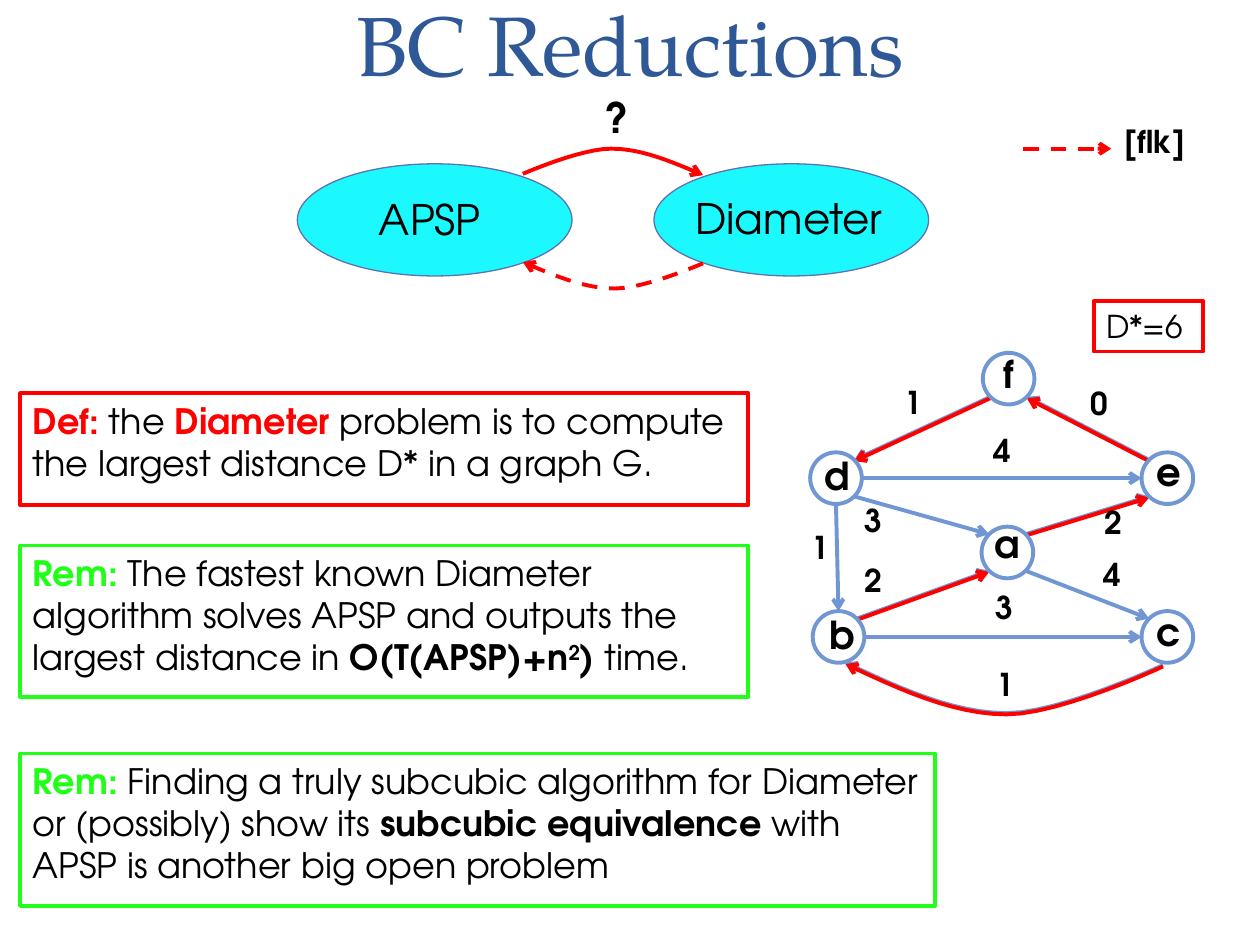
"""Build the BC Reductions slide: two problems, three statements and a weighted graph."""
from math import cos, radians, sin
from typing import NamedTuple

from lxml import etree
from pptx import Presentation
from pptx.dml.color import RGBColor
from pptx.enum.dml import MSO_LINE
from pptx.enum.shapes import MSO_CONNECTOR, MSO_SHAPE
from pptx.enum.text import MSO_ANCHOR, PP_ALIGN
from pptx.oxml.ns import qn
from pptx.util import Inches, Pt

COLUMNS, ROWS = 100, 75
CELL = Inches(0.1)
BODY_FONT, TITLE_FONT = "TeX Gyre Adventor", "TeX Gyre Pagella"
BLACK, RED, GREEN = "000000", "FF0000", "1FFF17"
CYAN, OVAL_EDGE, GRAPH_BLUE, TITLE_BLUE = "1BF9FF", "5C72B2", "7097D3", "2F5897"
LEFT, CENTER = PP_ALIGN.LEFT, PP_ALIGN.CENTER
TOP, BOTTOM = MSO_ANCHOR.TOP, MSO_ANCHOR.BOTTOM
OVAL, RECTANGLE = MSO_SHAPE.OVAL, MSO_SHAPE.RECTANGLE
STRAIGHT, DASH = MSO_CONNECTOR.STRAIGHT, MSO_LINE.DASH
NODE_SIZE = 4.1
PATH_SHIFT = 0.1
EAST, SOUTH_EAST, SOUTH, SOUTH_WEST = 0, 45, 90, 135
WEST, NORTH_WEST, NORTH, NORTH_EAST = 180, 225, 270, 315


class Point(NamedTuple):
    x: float
    y: float


class Box(NamedTuple):
    left: float
    top: float
    width: float
    height: float


class Run(NamedTuple):
    text: str
    color: str = BLACK
    bold: bool = False
    raised: bool = False


class Statement(NamedTuple):
    box: Box
    border: str
    runs: list[Run]


class Node(NamedTuple):
    center: Point
    label_center: Point


class Edge(NamedTuple):
    start: str
    start_side: int
    end: str
    end_side: int
    on_path: bool = False


class Label(NamedTuple):
    text: str
    box: Box
    size: int = 18
    bold: bool = True


STATEMENTS = [
    Statement(Box(1.6, 31.2, 57.8, 8.9), RED, [
        Run("Def: ", RED, True), Run("the "), Run("Diameter ", RED, True),
        Run("problem is to compute the largest distance D* in a graph G.")]),
    Statement(Box(1.6, 43.3, 57.8, 12), GREEN, [
        Run("Rem: ", GREEN, True),
        Run("The fastest known Diameter algorithm solves APSP and outputs the largest distance in "),
        Run("O(T(APSP)+n", bold=True), Run("2", bold=True, raised=True),
        Run(") ", bold=True), Run("time.")]),
    Statement(Box(1.6, 59.8, 72.6, 12.1), GREEN, [
        Run("Rem: ", GREEN, True),
        Run("Finding a truly subcubic algorithm for Diameter or (possibly) show its "),
        Run("subcubic equivalence", bold=True),
        Run(" with APSP is another big open problem")]),
]
NODES = {
    "f": Node(Point(80.05, 30.05), Point(80.05, 29.65)),
    "e": Node(Point(92.65, 37.95), Point(92.8, 37.45)),
    "d": Node(Point(66.35, 37.95), Point(66.45, 37.75)),
    "a": Node(Point(79.95, 43.85), Point(79.95, 43.15)),
    "b": Node(Point(66.55, 50.55), Point(66.85, 50.35)),
    "c": Node(Point(92.65, 50.55), Point(92.8, 50.15)),
}
EDGES = [
    Edge("b", EAST, "c", WEST),
    Edge("b", NORTH_EAST, "a", SOUTH_WEST, on_path=True),
    Edge("a", SOUTH_EAST, "c", NORTH_WEST),
    Edge("d", SOUTH_EAST, "a", NORTH_WEST),
    Edge("a", NORTH_EAST, "e", SOUTH_WEST, on_path=True),
    Edge("d", EAST, "e", WEST),
    Edge("e", NORTH_WEST, "f", SOUTH_EAST, on_path=True),
    Edge("f", SOUTH_WEST, "d", NORTH_EAST, on_path=True),
    Edge("d", SOUTH, "b", NORTH),
]
WEIGHTS = [
    ("3", 78, 46.2), ("1", 78.1, 52.3), ("2", 67.6, 44), ("4", 86.6, 43.6), ("3", 67.6, 39.3),
    ("2", 86.7, 39.4), ("4", 77.9, 33.7), ("0", 85.6, 30), ("1", 70.8, 29.9), ("1", 63.4, 41.4),
]
LABELS = [Label(weight, Box(left, top, 3.4, 4)) for weight, left, top in WEIGHTS] + [
    Label("?", Box(47.1, 6.8, 3.9, 5), size=24),
    Label("[flk]", Box(88.3, 9.2, 7, 4)),
]
PROBLEMS = [
    (Box(23.6, 13, 21.8, 8.9), Label("APSP", Box(29.1, 14.9, 10.3, 5), 24, False)),
    (Box(51.9, 13, 21.8, 8.9), Label("Diameter", Box(54.2, 14.8, 19, 5), 24, False)),
]


def cells(*lengths: float) -> list[int]:
    return [round(length * CELL) for length in lengths]


def rgb(color: str) -> RGBColor:
    return RGBColor.from_string(color)


def write(frame, runs: list[Run], size=18, font=BODY_FONT, align=LEFT, anchor=TOP,
          wrap=True, before=0, line_spacing=None) -> None:
    frame.word_wrap, frame.vertical_anchor = wrap, anchor
    paragraph = frame.paragraphs[0]
    paragraph.alignment, paragraph.space_before = align, Pt(before)
    paragraph.line_spacing = line_spacing
    for part in runs:
        run = paragraph.add_run()
        run.text = part.text
        run.font.name, run.font.size, run.font.bold = font, Pt(size), part.bold
        run.font.color.rgb = rgb(part.color)
        if part.raised:
            run.font._element.set("baseline", "30000")


def add_outline(slide, kind, box: Box, border: str, fill=None, weight=2.25):
    shape = slide.shapes.add_shape(kind, *cells(*box))
    shape.shadow.inherit = False
    shape.line.color.rgb, shape.line.width = rgb(border), Pt(weight)
    if fill:
        shape.fill.solid()
        shape.fill.fore_color.rgb = rgb(fill)
    else:
        shape.fill.background()
    return shape


def add_label(slide, label: Label, align=LEFT, wrap=True) -> None:
    frame = slide.shapes.add_textbox(*cells(*label.box)).text_frame
    write(frame, [Run(label.text, bold=label.bold)], size=label.size, align=align, wrap=wrap)


def style_arrow(line, color: str, dashed=False) -> None:
    line.color.rgb, line.width = rgb(color), Pt(2.25)
    if dashed:
        line.dash_style = DASH
    etree.SubElement(line._get_or_add_ln(), qn("a:tailEnd"), type="arrow")


def add_arrow(slide, start: Point, end: Point, color: str, dashed=False) -> None:
    arrow = slide.shapes.add_connector(STRAIGHT, *cells(*start, *end))
    style_arrow(arrow.line, color, dashed)
    etree.SubElement(arrow._element.spPr, qn("a:effectLst"))


def bezier(controls: list[Point], share: float) -> Point:
    while len(controls) > 1:
        controls = [Point(p.x + (q.x - p.x) * share, p.y + (q.y - p.y) * share)
                    for p, q in zip(controls, controls[1:])]
    return controls[0]


def add_arc(slide, tip: Point, peak: Point, tail: Point, color: str, dashed=False, steps=12) -> None:
    third = (peak.x - tip.x) / 3
    halves = [
        [tail, tail, Point(peak.x + third, peak.y), peak],
        [peak, Point(peak.x - third, peak.y), Point(tip.x + third, (tip.y + peak.y) / 2), tip],
    ]
    points = [bezier(half, step / steps) for half in halves for step in range(1, steps + 1)]
    builder = slide.shapes.build_freeform(*cells(*tail))
    builder.add_line_segments([cells(*point) for point in points], close=False)
    arc = builder.convert_to_shape()
    arc.shadow.inherit = False
    arc.fill.background()
    style_arrow(arc.line, color, dashed)


def rim(name: str, side: int, shift: float) -> Point:
    center, radius = NODES[name].center, NODE_SIZE / 2
    return Point(center.x + radius * cos(radians(side)), center.y + radius * sin(radians(side)) + shift)


def add_graph(slide) -> None:
    for color, shift in ((GRAPH_BLUE, 0), (RED, PATH_SHIFT)):
        for edge in EDGES:
            if edge.on_path or color == GRAPH_BLUE:
                add_arrow(slide, rim(edge.start, edge.start_side, shift),
                          rim(edge.end, edge.end_side, shift), color)
        add_arc(slide, Point(67.1, 52.6 + shift), Point(79.9, 56.6 + shift),
                Point(92.3, 52.8 + shift), color)
    for name, (center, middle) in NODES.items():
        half = NODE_SIZE / 2
        add_outline(slide, OVAL, Box(center.x - half, center.y - half, NODE_SIZE, NODE_SIZE), GRAPH_BLUE)
        add_label(slide, Label(name, Box(middle.x - 2, middle.y - 2.35, 4, 4.7), 22), CENTER, False)


def main() -> None:
    deck = Presentation()
    deck.slide_width, deck.slide_height = cells(COLUMNS, ROWS)
    slide = deck.slides.add_slide(deck.slide_layouts[5])
    title = slide.shapes.title
    title.left, title.top, title.width, title.height = cells(0, 0.1, COLUMNS, 7.8)
    write(title.text_frame, [Run("BC Reductions", TITLE_BLUE)], size=48, font=TITLE_FONT,
          align=CENTER, anchor=BOTTOM, line_spacing=Pt(58))
    for box, border, runs in STATEMENTS:
        write(add_outline(slide, RECTANGLE, box, border).text_frame, runs, size=20, before=4)
    add_graph(slide)
    for oval, label in PROBLEMS:
        add_outline(slide, OVAL, oval, OVAL_EDGE, CYAN, 0.75)
        add_label(slide, label)
    add_arc(slide, Point(41.5, 20.8), Point(48.8, 22.9), Point(55.8, 20.9), RED, dashed=True)
    add_arc(slide, Point(55.8, 13.9), Point(48.5, 11.8), Point(41.5, 13.8), RED)
    add_arrow(slide, Point(81.2, 11.8), Point(88.2, 11.8), RED, dashed=True)
    for label in LABELS:
        add_label(slide, label, wrap=len(label.text) > 1)
    diameter = add_outline(slide, RECTANGLE, Box(86.8, 23.9, 8.7, 4), RED)
    write(diameter.text_frame, [Run("D*=6")])
    deck.save("out.pptx")


if __name__ == "__main__":
    main()
